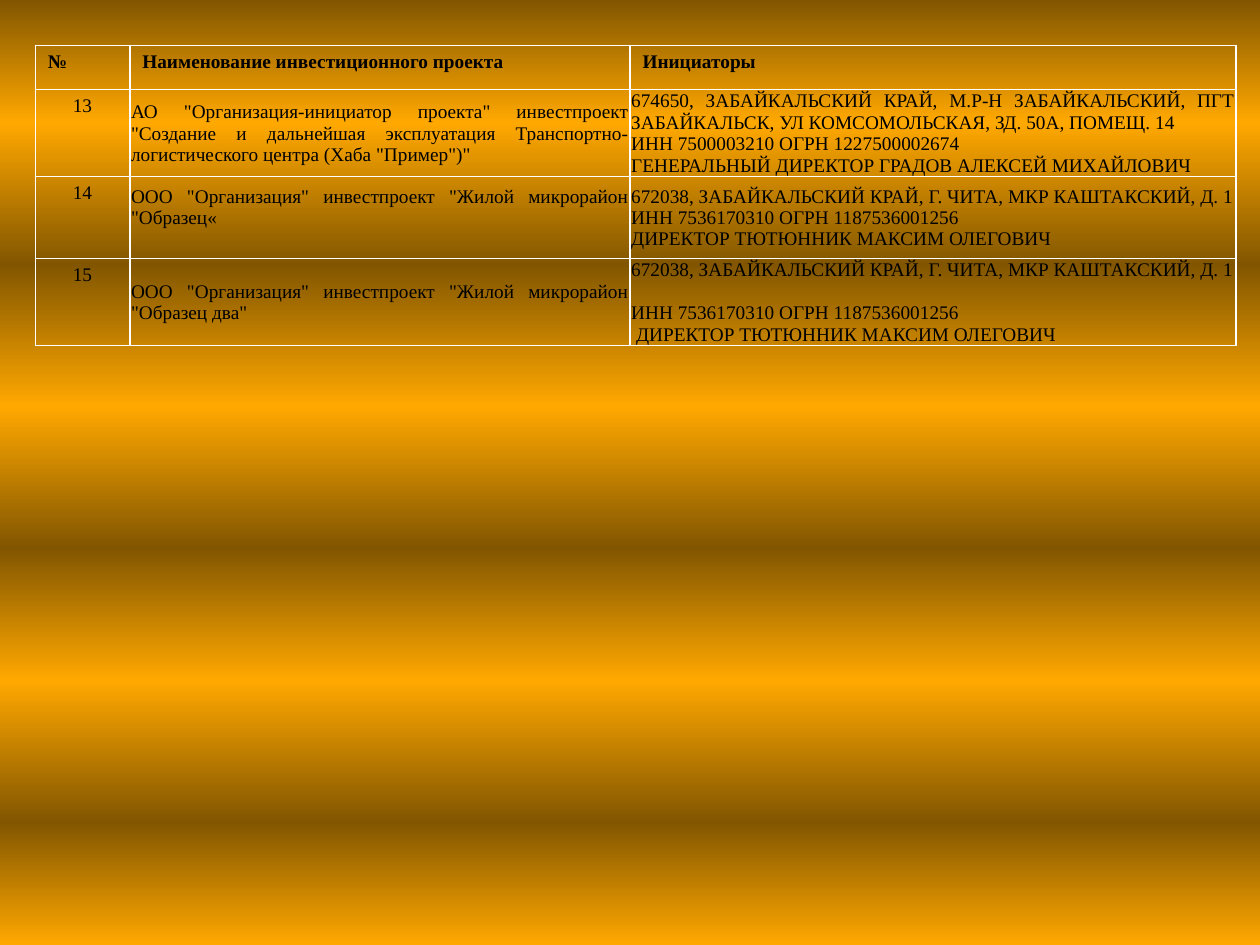
from lxml.etree import SubElement
from pptx import Presentation
from pptx.dml.color import RGBColor
from pptx.enum.text import MSO_ANCHOR as Anchor, PP_ALIGN as Align
from pptx.oxml.ns import qn
from pptx.util import Inches, Pt

FONT = "Times New Roman"
DARK, BRIGHT = "825600", "FFA800"
STOPS = (0, 13, 28, 43, 58, 72, 87, 100)
COLUMNS = (0.75, 3.97, 4.81)
ROWS = (0.35, 0.69, 0.65, 0.69)
LINE_GAP = 12.2
ADDRESS = "672038, ЗАБАЙКАЛЬСКИЙ КРАЙ, Г. ЧИТА, МКР КАШТАКСКИЙ, Д. 1"
TAX_IDS = "ИНН 7536170310 ОГРН 1187536001256"
DIRECTOR = "ДИРЕКТОР ТЮТЮННИК МАКСИМ ОЛЕГОВИЧ"
HEADERS = ("№", "Наименование инвестиционного проекта", "Инициаторы")
PROJECTS = (
    ("13",
     'АО "Организация-инициатор проекта" инвестпроект "Создание и дальнейшая '
     'эксплуатация Транспортно-логистического центра (Хаба "Пример")"',
     ("674650, ЗАБАЙКАЛЬСКИЙ КРАЙ, М.Р-Н ЗАБАЙКАЛЬСКИЙ, ПГТ ЗАБАЙКАЛЬСК, "
      "УЛ КОМСОМОЛЬСКАЯ, ЗД. 50А, ПОМЕЩ. 14",
      "ИНН 7500003210 ОГРН 1227500002674",
      "ГЕНЕРАЛЬНЫЙ ДИРЕКТОР ГРАДОВ АЛЕКСЕЙ МИХАЙЛОВИЧ")),
    ("14", 'ООО "Организация" инвестпроект "Жилой микрорайон "Образец«',
     (ADDRESS, TAX_IDS, DIRECTOR)),
    ("15", 'ООО "Организация" инвестпроект "Жилой микрорайон "Образец два"',
     (ADDRESS, TAX_IDS, " " + DIRECTOR)),
)


def rgb(value):
    """Return the colour for a hex string."""
    return RGBColor.from_string(value)


def paint_background(slide):
    """Fill the slide with alternating dark and bright horizontal bands."""
    fill = slide.background.fill
    fill.gradient()
    fill.gradient_angle = 270
    stops = next(slide.element.iter(qn("a:gsLst")))
    for stop in list(stops):
        stops.remove(stop)
    for i, position in enumerate(STOPS):
        stop = SubElement(stops, qn("a:gs"), pos=str(position * 1000))
        SubElement(stop, qn("a:srgbClr"), val=BRIGHT if i % 2 else DARK)


def set_borders(cell, color="FFFFFF", width=1):
    """Draw a solid line on all four sides of a cell."""
    properties = cell._tc.get_or_add_tcPr()
    for side in ("lnL", "lnR", "lnT", "lnB"):
        line = SubElement(properties, qn(f"a:{side}"), w=str(Pt(width)))
        fill = SubElement(line, qn("a:solidFill"))
        SubElement(fill, qn("a:srgbClr"), val=color)


def fill_cell(cell, lines, align=Align.JUSTIFY, bold=False):
    """Write paragraphs into a transparent bordered cell."""
    set_borders(cell)
    cell.fill.background()
    tf = cell.text_frame
    tf.text = "\n".join(lines)
    for p in tf.paragraphs:
        p.alignment = align
        p.font.name, p.font.size, p.font.bold = FONT, Pt(11), bold
        p.font.color.rgb = rgb("000000")


def fill_detail(cell, lines):
    """Write a vertically centred cell with almost no margins."""
    fill_cell(cell, lines)
    cell.vertical_anchor = Anchor.MIDDLE
    cell.margin_left = cell.margin_right = cell.margin_top = Inches(0.01)
    cell.margin_bottom = 0


def add_project_table(slide):
    """Add the table of projects and their initiators."""
    table = slide.shapes.add_table(
        len(ROWS), len(COLUMNS), Inches(0.28), Inches(0.36),
        Inches(sum(COLUMNS)), Inches(sum(ROWS))).table
    table.first_row = table.horz_banding = False
    for column, width in zip(table.columns, COLUMNS):
        column.width = Inches(width)
    for row, height in zip(table.rows, ROWS):
        row.height = Inches(height)
    for i, header in enumerate(HEADERS):
        fill_cell(table.cell(0, i), [header], bold=True)
    for i, (number, project, initiator) in enumerate(PROJECTS, 1):
        fill_cell(table.cell(i, 0), [number], Align.CENTER)
        fill_detail(table.cell(i, 1), [project])
        fill_detail(table.cell(i, 2), initiator)
    table.cell(2, 1).margin_bottom = Inches(0.17)
    table.cell(3, 2).text_frame.paragraphs[0].space_after = Pt(LINE_GAP)


def main():
    """Build and save the slide."""
    prs = Presentation()
    prs.slide_width, prs.slide_height = Inches(10), Inches(7.5)
    slide = prs.slides.add_slide(prs.slide_layouts[6])
    paint_background(slide)
    add_project_table(slide)
    prs.save("out.pptx")


if __name__ == "__main__":
    main()
